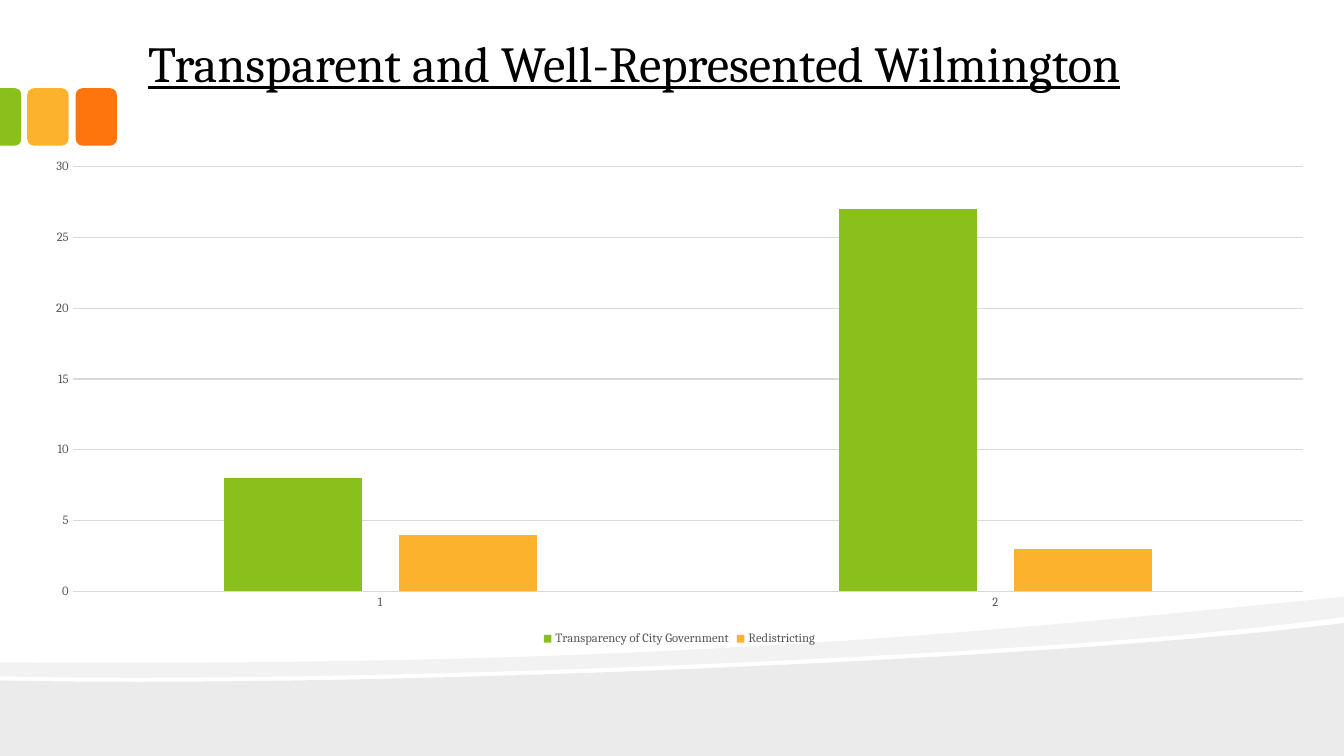
from dataclasses import dataclass

from lxml.etree import SubElement
from pptx import Presentation
from pptx.chart.data import CategoryChartData
from pptx.dml.color import RGBColor
from pptx.enum.chart import XL_CHART_TYPE as ChartType
from pptx.enum.chart import XL_LEGEND_POSITION as LegendPosition
from pptx.enum.chart import XL_TICK_MARK as TickMark
from pptx.enum.shapes import MSO_SHAPE as Preset
from pptx.enum.text import MSO_ANCHOR as Anchor
from pptx.oxml.ns import qn
from pptx.slide import Slide
from pptx.util import Inches, Pt

Point = tuple[float, float]


@dataclass(frozen=True)
class Theme:
    font: str = "Cambria"
    black: RGBColor = RGBColor(0x00, 0x00, 0x00)
    label: RGBColor = RGBColor(0x59, 0x59, 0x59)
    grid: RGBColor = RGBColor(0xD9, 0xD9, 0xD9)
    green: RGBColor = RGBColor(0x89, 0xC0, 0x1C)
    amber: RGBColor = RGBColor(0xFC, 0xB2, 0x2C)
    orange: RGBColor = RGBColor(0xFE, 0x75, 0x0E)
    title_size: Pt = Pt(36)
    chart_size: Pt = Pt(10)
    label_size: Pt = Pt(9)
    grid_width: Pt = Pt(0.75)


@dataclass(frozen=True)
class Tab:
    left: float
    width: float
    preset: Preset
    color: RGBColor
    rotation: int = 0
    adjustments: tuple[float, ...] = ()


@dataclass(frozen=True)
class Wave:
    start: Point
    segments: tuple[tuple[Point, ...], ...]  # one point: line; three points: Bezier curve
    opacity: int  # percent


@dataclass(frozen=True)
class Series:
    name: str
    values: tuple[int, ...]
    color: RGBColor


THEME = Theme()
TAB_TOP, TAB_HEIGHT = 0.875, 0.57
WAVES = (
    Wave((13.33, 6.18), (
        ((13.33, 7.5),),
        ((0, 7.5),),
        ((0, 6.75),),
        ((3.52, 6.83), (10.42, 6.55), (13.33, 6.18)),
    ), 8),
    Wave((13.33, 5.92), (
        ((13.33, 6.12),),
        ((12.55, 6.23), (11.49, 6.33), (10.29, 6.41)),
        ((6.98, 6.63), (2.58, 6.77), (0, 6.71)),
        ((0, 6.57),),
        ((6.52, 6.62), (9.71, 6.27), (13.33, 5.92)),
    ), 5),
)
TABS = (
    Tab(0.75, 0.41, Preset.ROUNDED_RECTANGLE, THEME.orange),
    Tab(0.27, 0.41, Preset.ROUNDED_RECTANGLE, THEME.amber),
    Tab(0, 0.21, Preset.ROUND_2_SAME_RECTANGLE, THEME.green, 90, (0.292, 0)),
)
CATEGORIES = ("1", "2")
SERIES = (
    Series("Transparency of City Government", (8, 27), THEME.green),
    Series("Redistricting", (4, 3), THEME.amber),
)


def paint(shape, color: RGBColor) -> None:
    shape.shadow.inherit = False
    shape.fill.solid()
    shape.fill.fore_color.rgb = color
    shape.line.fill.background()


def style_font(font, size: Pt, color: RGBColor) -> None:
    font.name = THEME.font
    font.size = size
    font.color.rgb = color


def add_wave(slide: Slide, wave: Wave) -> None:
    builder = slide.shapes.build_freeform(*map(Inches, wave.start))
    builder.add_line_segments([(Inches(x), Inches(y))
                               for segment in wave.segments for x, y in segment])
    shape = builder.convert_to_shape()
    paint(shape, THEME.black)
    color = shape.element.spPr.find(qn("a:solidFill"))[0]
    SubElement(color, qn("a:alpha"), val=str(wave.opacity * 1000))

    # Merge each run of three line steps that stands for a curve
    steps = iter(list(shape.element.iter(qn("a:lnTo"))))
    for segment in wave.segments:
        first, *others = [next(steps) for _ in segment]
        if others:
            first.tag = qn("a:cubicBezTo")
            curve = first.getparent()[first.getparent().index(first)]
            for step in others:
                curve.append(step[0])
                step.getparent().remove(step)


def add_tab(slide: Slide, tab: Tab) -> None:
    left, top, width, height = tab.left, TAB_TOP, tab.width, TAB_HEIGHT
    if tab.rotation:  # a quarter turn swaps the sides about the centre
        shift = (height - width) / 2
        left, top, width, height = left - shift, top + shift, height, width
    shape = slide.shapes.add_shape(tab.preset, Inches(left), Inches(top),
                                   Inches(width), Inches(height))
    shape.rotation = tab.rotation
    for index, value in enumerate(tab.adjustments):
        shape.adjustments[index] = value
    paint(shape, tab.color)


def add_title(slide: Slide, text: str) -> None:
    box = slide.shapes.add_textbox(Inches(1.33), Inches(0.17), Inches(10.66), Inches(1.42))
    frame = box.text_frame
    frame.word_wrap = True
    frame.vertical_anchor = Anchor.TOP
    frame.margin_left = frame.margin_right = Inches(0.14)
    frame.margin_top, frame.margin_bottom = Inches(0.15), Inches(0.07)
    paragraph = frame.paragraphs[0]
    paragraph.text = text
    style_font(paragraph.font, THEME.title_size, THEME.black)
    paragraph.font.underline = True


def add_column_chart(slide: Slide) -> None:
    data = CategoryChartData()
    data.categories = CATEGORIES
    for series in SERIES:
        data.add_series(series.name, series.values)
    chart = slide.shapes.add_chart(ChartType.COLUMN_CLUSTERED, Inches(0.3), Inches(1.48),
                                   Inches(12.88), Inches(4.97), data).chart
    chart.has_title = False
    style_font(chart.font, THEME.chart_size, THEME.black)

    # Columns
    plot = chart.plots[0]
    plot.gap_width, plot.overlap = 219, -27
    plot.vary_by_categories = False
    for drawn, series in zip(plot.series, SERIES):
        drawn.format.fill.solid()
        drawn.format.fill.fore_color.rgb = series.color

    # Axes and gridlines
    category_axis, value_axis = chart.category_axis, chart.value_axis
    for axis in (category_axis, value_axis):
        axis.major_tick_mark = axis.minor_tick_mark = TickMark.NONE
        style_font(axis.tick_labels.font, THEME.label_size, THEME.label)
    value_axis.minimum_scale, value_axis.maximum_scale = 0, 30
    value_axis.major_unit = 5
    value_axis.format.line.fill.background()
    for line in (category_axis.format.line, value_axis.major_gridlines.format.line):
        line.color.rgb = THEME.grid
        line.width = THEME.grid_width

    # Legend
    chart.has_legend = True
    chart.legend.position = LegendPosition.BOTTOM
    chart.legend.include_in_layout = False
    style_font(chart.legend.font, THEME.label_size, THEME.label)


def main() -> None:
    presentation = Presentation()
    presentation.slide_width, presentation.slide_height = Inches(13.33), Inches(7.5)
    slide = presentation.slides.add_slide(presentation.slide_layouts[6])
    for wave in WAVES:
        add_wave(slide, wave)
    for tab in TABS:
        add_tab(slide, tab)
    add_title(slide, "Transparent and Well-Represented Wilmington")
    add_column_chart(slide)
    presentation.save("out.pptx")


if __name__ == "__main__":
    main()
